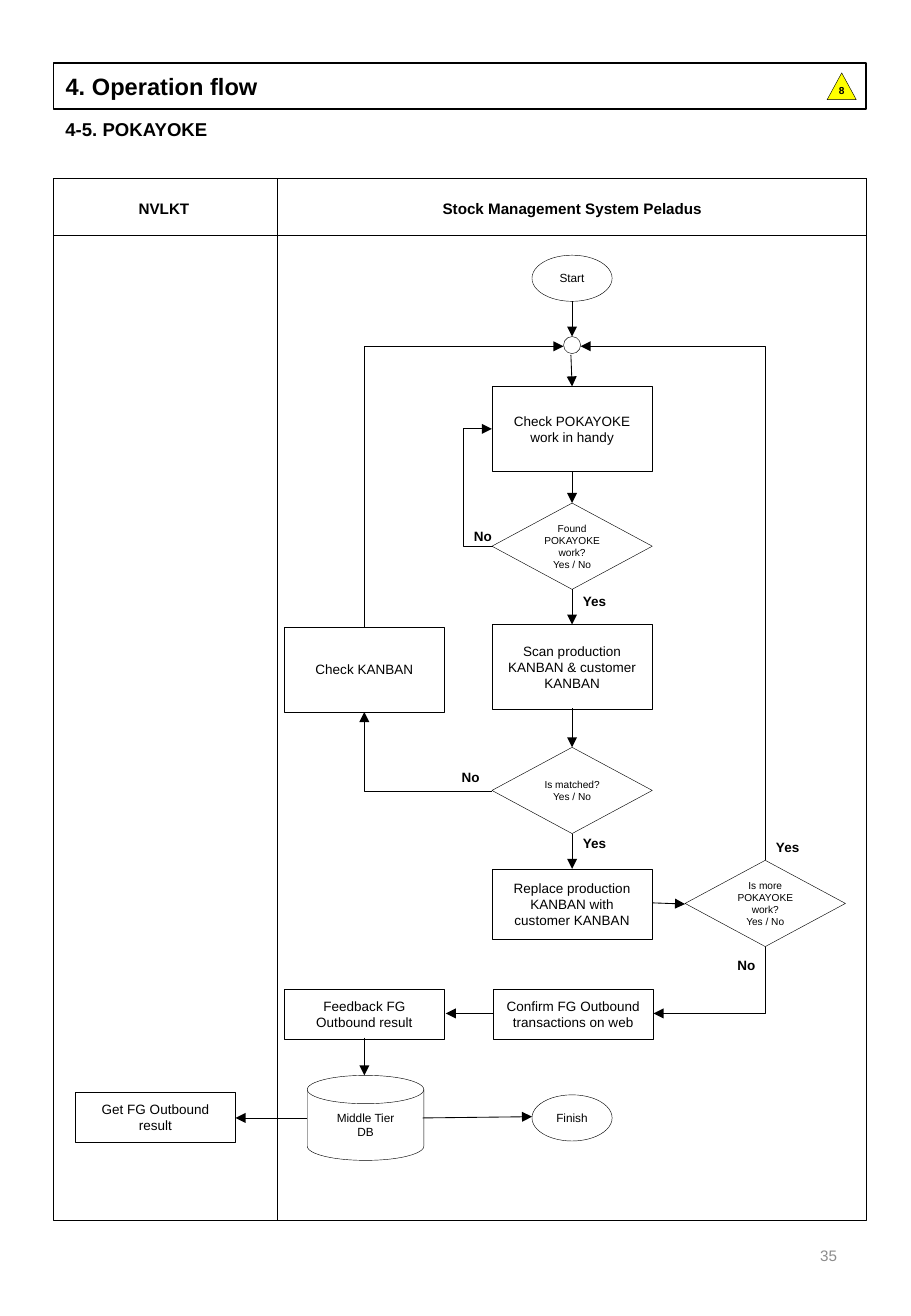
from lxml import etree
from pptx import Presentation, util as u
from pptx.dml.color import RGBColor
from pptx.enum import shapes as sh, text as tx
from pptx.oxml.ns import qn

PX = 9144  # 100 px to the inch
HUES = {"ink": "000000", "page": "8C8C8C", "mark": "FFFF00"}
KIND = sh.MSO_SHAPE
SIDE = tx.PP_ALIGN

deck = Presentation()
deck.slide_width, deck.slide_height = 750 * PX, 1083 * PX
slide = deck.slides.add_slide(deck.slide_layouts[5])


def write(item, lines, size, bold=False, side=SIDE.CENTER, hue="ink"):
    frame = item.text_frame
    frame.word_wrap = True
    frame.auto_size = tx.MSO_AUTO_SIZE.NONE
    frame.vertical_anchor = tx.MSO_ANCHOR.MIDDLE
    for i, line in enumerate(lines):
        para = frame.add_paragraph() if i else frame.paragraphs[0]
        para.alignment = side
        run = para.add_run()
        run.text = line
        font = run.font
        font.name, font.size, font.bold = "Arial", u.Pt(size), bold
        font.color.rgb = RGBColor.from_string(HUES[hue])


def outline(item, width):
    item.line.color.rgb = RGBColor.from_string(HUES["ink"])
    item.line.width = u.Pt(width)


# Heading
title = slide.shapes.title
title.left, title.top, title.width, title.height = [n * PX for n in (44, 52, 669, 38)]
outline(title, 1)
write(title, ["4. Operation flow"], 14, True, SIDE.LEFT)

# Frame, steps and marks: kind, area, lines, text size
steps = [
    (KIND.RECTANGLE, (44, 147, 669, 857), [], 8),
    (KIND.RECTANGLE, (44, 147, 669, 47), [], 8),
    (KIND.ISOSCELES_TRIANGLE, (681, 60, 24, 22), ["8"], 6),
    (KIND.OVAL, (438, 210, 66, 38), ["Start"], 7),
    (KIND.OVAL, (464, 277, 14, 14), [], 7),
    (KIND.RECTANGLE, (405, 318, 132, 70), ["Check POKAYOKE work in handy"], 8),
    (KIND.FLOWCHART_DECISION, (405, 414, 132, 71), ["Found POKAYOKE work?", "Yes / No"], 6),
    (KIND.RECTANGLE, (405, 514, 132, 70), ["Scan production KANBAN & customer KANBAN"], 8),
    (KIND.RECTANGLE, (234, 516, 132, 70), ["Check KANBAN"], 8),
    (KIND.FLOWCHART_DECISION, (405, 615, 132, 71), ["Is matched?", "Yes / No"], 6),
    (KIND.RECTANGLE, (405, 715, 132, 58), ["Replace production KANBAN with customer KANBAN"], 8),
    (KIND.FLOWCHART_DECISION, (564, 708, 132, 71), ["Is more POKAYOKE work?", "Yes / No"], 6),
    (KIND.RECTANGLE, (406, 814, 132, 41), ["Confirm FG Outbound transactions on web"], 8),
    (KIND.RECTANGLE, (234, 814, 132, 41), ["Feedback FG Outbound result"], 8),
    (KIND.FLOWCHART_MAGNETIC_DISK, (253, 885, 96, 70), ["Middle Tier", "DB"], 7),
    (KIND.RECTANGLE, (62, 899, 132, 41), ["Get FG Outbound result"], 8),
    (KIND.OVAL, (438, 901, 66, 38), ["Finish"], 7),
]
for kind, area, lines, size in steps:
    step = slide.shapes.add_shape(kind, *[n * PX for n in area])
    step.shadow.inherit = False
    step.fill.background()
    outline(step, 0.25)
    frame = step.text_frame
    if kind == KIND.FLOWCHART_DECISION:
        frame.margin_left = frame.margin_right = 0
    if kind == KIND.ISOSCELES_TRIANGLE:
        step.fill.solid()
        step.fill.fore_color.rgb = RGBColor.from_string(HUES["mark"])
        frame.margin_top = 0
    write(step, lines, size, kind == KIND.ISOSCELES_TRIANGLE)

# Captions: area, words, size, bold, side, hue
notes = [
    ((44, 92, 669, 29), "4-5. POKAYOKE", 11, True, SIDE.LEFT, "ink"),
    ((43, 148, 184, 47), "NVLKT", 9, True, SIDE.CENTER, "ink"),
    ((229, 148, 484, 47), "Stock Management System Peladus", 9, True, SIDE.CENTER, "ink"),
    ((530, 1004, 169, 58), "35", 9, False, SIDE.RIGHT, "page"),
]
for left, top, word in [
    (464, 483, "Yes"), (372, 430, "No"), (464, 682, "Yes"),
    (362, 628, "No"), (623, 686, "Yes"), (589, 783, "No"),
]:
    notes.append(((left, top, 51, 23), word, 8, True, SIDE.CENTER, "ink"))
for area, words, *look in notes:
    note = slide.shapes.add_textbox(*[n * PX for n in area])
    write(note, [words], *look)

# Links: start, end, route, arrow end; a corner route leaves its start sideways
links = [
    ((228, 147), (228, 1004), "line", None),
    ((471, 248), (471, 277), "line", "tailEnd"),
    ((470, 292), (471, 318), "line", "tailEnd"),
    ((471, 388), (471, 414), "line", "tailEnd"),
    ((471, 485), (471, 514), "line", "tailEnd"),
    ((471, 583), (471, 615), "line", "tailEnd"),
    ((471, 686), (471, 715), "line", "tailEnd"),
    ((537, 743), (564, 744), "line", "tailEnd"),
    ((406, 834), (367, 834), "line", "tailEnd"),
    ((300, 854), (300, 885), "line", "tailEnd"),
    ((253, 920), (194, 920), "line", "tailEnd"),
    ((348, 920), (438, 919), "line", "tailEnd"),
    ((406, 450), (405, 353), "bentConnector3", "tailEnd"),
    ((405, 651), (300, 586), "bentConnector2", "tailEnd"),
    ((464, 285), (300, 516), "bentConnector2", "headEnd"),
    ((478, 285), (630, 708), "bentConnector2", "headEnd"),
    ((538, 834), (630, 779), "bentConnector2", "headEnd"),
]
for start, end, route, arrow in links:
    kind = sh.MSO_CONNECTOR.STRAIGHT if route == "line" else sh.MSO_CONNECTOR.ELBOW
    link = slide.shapes.add_connector(kind, *[n * PX for n in start + end])
    outline(link, 0.5)
    props = link._element.spPr
    shape = props.find(qn("a:prstGeom"))
    shape.set("prst", route)
    if route == "bentConnector3":
        bend = etree.SubElement(shape.find(qn("a:avLst")), qn("a:gd"))
        bend.set("name", "adj1")
        bend.set("fmla", "val 2500000")
    if arrow:
        etree.SubElement(props.find(qn("a:ln")), qn("a:" + arrow)).set("type", "triangle")
    etree.SubElement(props, qn("a:effectLst"))

deck.save("out.pptx")
